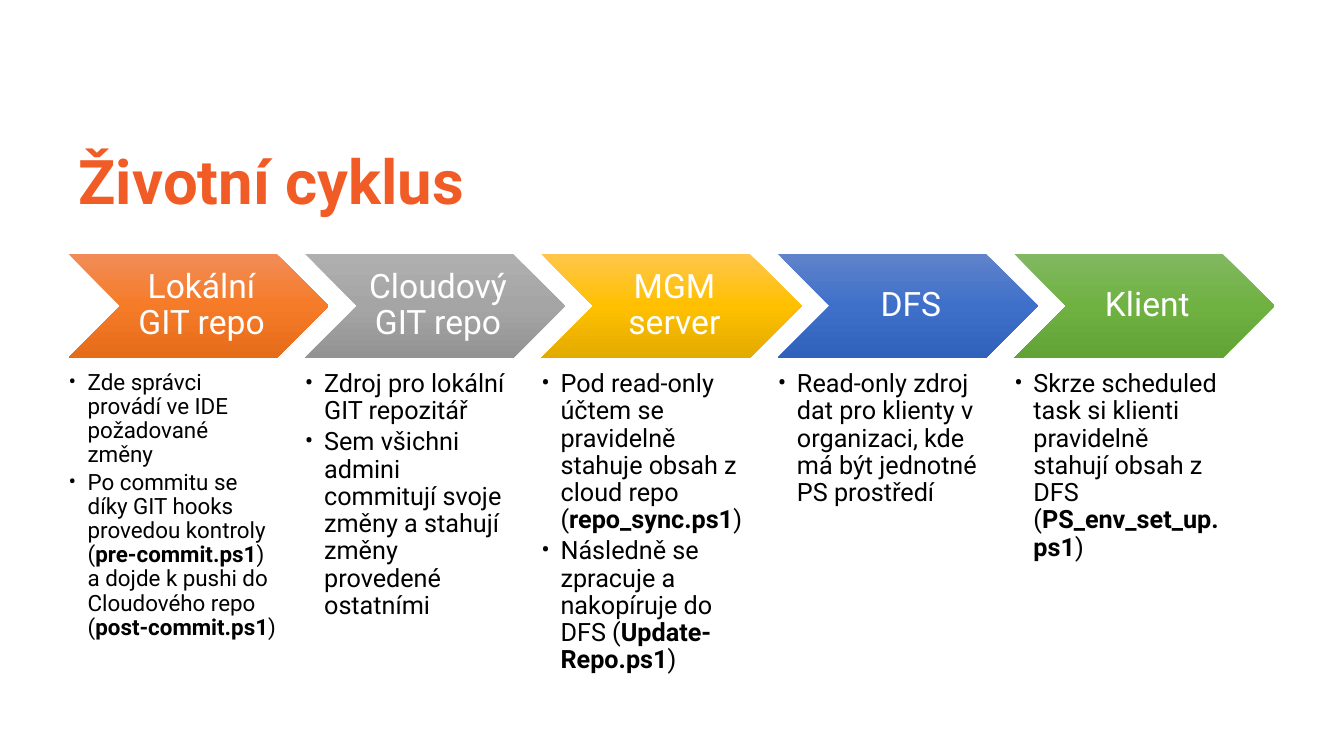
"""Build the life cycle slide: five chevrons with bullet lists beneath."""
import copy

import pptx
import pptx.dml.color
import pptx.enum.shapes
import pptx.enum.text
import pptx.oxml
import pptx.oxml.ns
import pptx.util

Inches = pptx.util.Inches
Pt = pptx.util.Pt
RGBColor = pptx.dml.color.RGBColor
Align = pptx.enum.text.PP_ALIGN
Anchor = pptx.enum.text.MSO_ANCHOR

TITLE = "Životní cyklus"
FONT = "Roboto"
TITLE_COLOR = RGBColor(0xF0, 0x5B, 0x26)
WHITE = RGBColor(0xFF, 0xFF, 0xFF)
BLACK = RGBColor(0x00, 0x00, 0x00)
ORANGE = [RGBColor(0xF1, 0x8C, 0x57), RGBColor(0xF6, 0x7B, 0x28), RGBColor(0xE5, 0x6C, 0x19)]
GRAY = [RGBColor(0xAF, 0xAF, 0xAF), RGBColor(0xA5, 0xA5, 0xA5), RGBColor(0x93, 0x93, 0x93)]
GOLD = [RGBColor(0xFF, 0xC6, 0x4B), RGBColor(0xFF, 0xC0, 0x00), RGBColor(0xE3, 0xAB, 0x00)]
BLUE = [RGBColor(0x61, 0x83, 0xCB), RGBColor(0x3E, 0x70, 0xCA), RGBColor(0x30, 0x62, 0xBB)]
GREEN = [RGBColor(0x81, 0xB8, 0x61), RGBColor(0x6F, 0xB2, 0x42), RGBColor(0x62, 0xA3, 0x36)]

STAGES = [
    ("Lokální GIT repo", ORANGE, 16, [
        ["Zde správci provádí ve IDE požadované změny"],
        ["Po commitu se díky GIT hooks provedou kontroly (", "pre-commit.ps1",
         ") a dojde k pushi do Cloudového repo (", "post-commit.ps1", ")"],
    ]),
    ("Cloudový GIT repo", GRAY, 18, [
        ["Zdroj pro lokální GIT repozitář"],
        ["Sem všichni admini commitují svoje změny a stahují změny provedené ostatními"],
    ]),
    ("MGM server", GOLD, 18, [
        ["Pod read-only účtem se pravidelně stahuje obsah z cloud repo (", "repo_sync.ps1", ")"],
        ["Následně se zpracuje a nakopíruje do DFS (", "Update-Repo.ps1", ")"],
    ]),
    ("DFS", BLUE, 18, [
        ["Read-only zdroj dat pro klienty v organizaci, kde má být jednotné PS prostředí"],
    ]),
    ("Klient", GREEN, 18, [
        ["Skrze scheduled task si klienti pravidelně stahují obsah z DFS (", "PS_env_set_up.ps1", ")"],
    ]),
]

LEFT, LAST_LEFT = 0.68, 10.06
PITCH = (LAST_LEFT - LEFT) / (len(STAGES) - 1)
CHEVRON_TOP, CHEVRON_WIDTH, CHEVRON_HEIGHT = 2.52, 2.58, 1.03
LIST_TOP, LIST_WIDTH, LIST_HEIGHT = 3.68, 2.06, 3.35
INDENT = Inches(0.19)


def add_span(para, text, size, color, bold=False):
    span = para.add_run()
    span.text = text
    span.font.name = FONT
    span.font.size = Pt(size)
    span.font.bold = bold
    span.font.color.rgb = color


def set_margins(frame, left, others):
    frame.word_wrap = True
    frame.margin_left = Inches(left)
    frame.margin_top = frame.margin_right = frame.margin_bottom = Inches(others)


def add_bullet(para):
    props = para._p.get_or_add_pPr()
    props.set("marL", str(INDENT))
    props.set("indent", str(-INDENT))
    namespace = pptx.oxml.ns.nsdecls("a")
    for element in (f'<a:buFont {namespace} typeface="{FONT}"/>',
                    f'<a:buChar {namespace} char="•"/>'):
        props.append(pptx.oxml.parse_xml(element))


def fill_gradient(shape, colors):
    shape.fill.gradient()
    shape.fill.gradient_angle = 270
    stop_list = shape._element.spPr.find(".//" + pptx.oxml.ns.qn("a:gsLst"))
    stop_list.insert(1, copy.deepcopy(stop_list[0]))
    for stop, position, color in zip(shape.fill.gradient_stops, (0, 0.5, 1), colors):
        stop.position = position
        stop.color.rgb = color


def add_chevron(page, left, label, colors):
    chevron = page.shapes.add_shape(
        pptx.enum.shapes.MSO_SHAPE.CHEVRON, Inches(left), Inches(CHEVRON_TOP),
        Inches(CHEVRON_WIDTH), Inches(CHEVRON_HEIGHT))
    chevron.shadow.inherit = False
    chevron.line.fill.background()
    fill_gradient(chevron, colors)
    frame = chevron.text_frame
    set_margins(frame, 0.1, 0.04)
    frame.vertical_anchor = Anchor.MIDDLE
    para = frame.paragraphs[0]
    para.alignment = Align.CENTER
    para.line_spacing = 0.9
    add_span(para, label, 24, WHITE)


def add_list(page, left, size, bullets):
    box = page.shapes.add_textbox(
        Inches(left), Inches(LIST_TOP), Inches(LIST_WIDTH), Inches(LIST_HEIGHT))
    frame = box.text_frame
    set_margins(frame, 0, 0)
    for index, spans in enumerate(bullets):
        para = frame.add_paragraph() if index else frame.paragraphs[0]
        para.level = 1
        para.line_spacing = 0.9
        para.space_after = Pt(0.15 * size)
        add_bullet(para)
        for order, text in enumerate(spans):
            add_span(para, text, size, BLACK, bold=order % 2 == 1)


def add_title(page):
    title = page.shapes.title
    title.left, title.top = Inches(LEFT), Inches(1.48)
    title.width, title.height = Inches(11.97), Inches(0.7)
    frame = title.text_frame
    frame.vertical_anchor = Anchor.MIDDLE
    para = frame.paragraphs[0]
    para.alignment = Align.LEFT
    para.line_spacing = 0.9
    add_span(para, TITLE, 44, TITLE_COLOR, bold=True)


def main():
    deck = pptx.Presentation()
    deck.slide_width, deck.slide_height = Inches(13.33), Inches(7.5)
    page = deck.slides.add_slide(deck.slide_layouts.get_by_name("Title Only"))
    add_title(page)
    for index, (label, colors, size, bullets) in enumerate(STAGES):
        left = LEFT + index * PITCH
        add_chevron(page, left, label, colors)
        add_list(page, left, size, bullets)
    deck.save("out.pptx")


if __name__ == "__main__":
    main()
